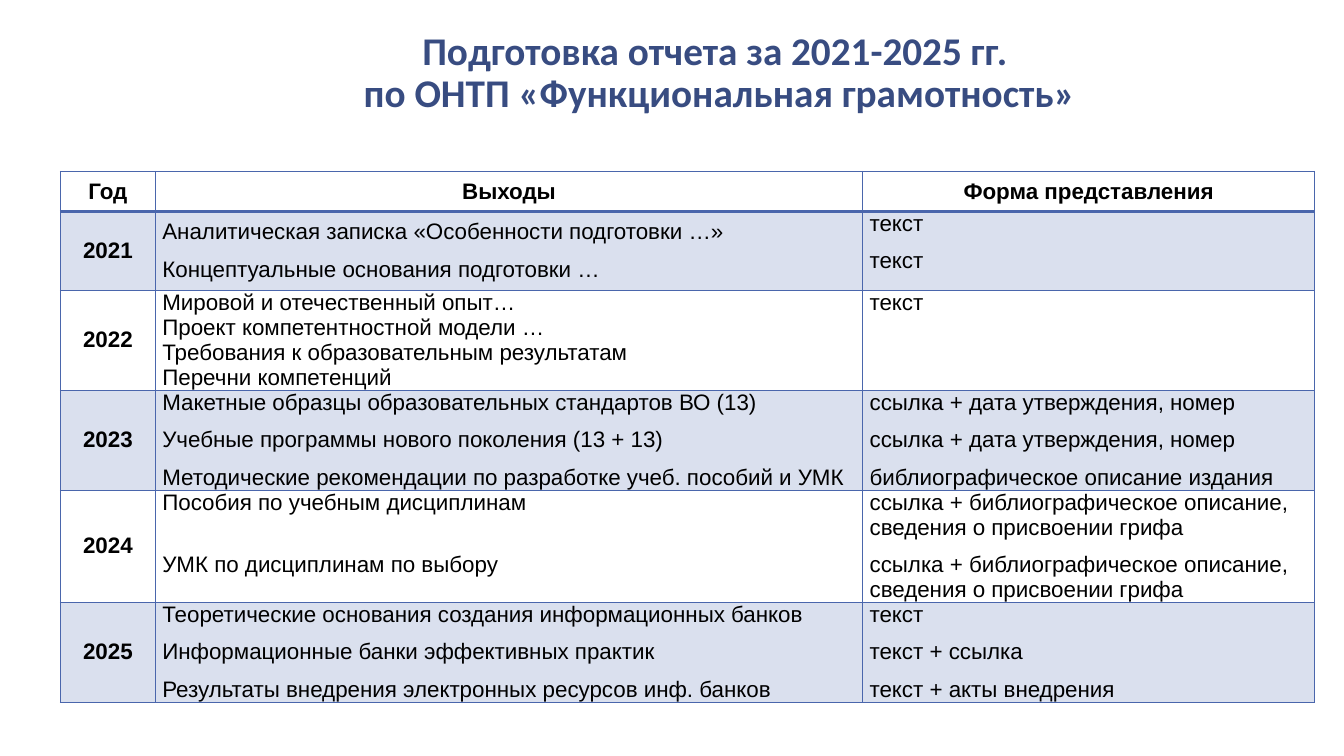
from dataclasses import dataclass

from lxml import etree
from pptx import Presentation
from pptx.dml.color import RGBColor
from pptx.enum.text import MSO_ANCHOR, PP_ALIGN
from pptx.oxml.ns import qn
from pptx.util import Pt

CENTER, LEFT = PP_ALIGN.CENTER, PP_ALIGN.LEFT
MIDDLE, TOP = MSO_ANCHOR.MIDDLE, MSO_ANCHOR.TOP
TITLE_ONLY = 5


@dataclass(frozen=True)
class Theme:
    title_color: str = "384C81"
    text_color: str = "000000"
    accent: str = "4A66AC"
    band_alpha: int = 20000
    title_font: str = "Calibri"
    body_font: str = "Arial"
    title_size: float = 28
    body_size: float = 16
    item_gap: float = 8.9
    wide_gap: float = 26.8
    thin_border: float = 1
    header_border: float = 2


@dataclass(frozen=True)
class YearRow:
    year: str
    outputs: tuple[str, ...]
    forms: tuple[str, ...]
    height: float
    gap: float = 0
    outputs_gap: float | None = None
    outputs_anchor: MSO_ANCHOR = TOP
    banded: bool = False


@dataclass(frozen=True)
class CellStyle:
    align: PP_ALIGN = LEFT
    anchor: MSO_ANCHOR = TOP
    bold: bool = False
    gap: float = 0
    banded: bool = False
    top: float = 1
    bottom: float = 1


THEME = Theme()
SLIDE_SIZE = (960, 540)
TITLE_BOX = {"left": 185, "top": 0, "width": 657.4, "height": 105.8}
TITLE = "Подготовка отчета за 2021-2025 гг. \vпо ОНТП «Функциональная грамотность»"
TABLE_LEFT, TABLE_TOP = 43.2, 122.4
COLUMN_WIDTHS = (67.8, 505.2, 323)
HEADER_HEIGHT = 28.6
HEADINGS = ("Год", "Выходы", "Форма представления")
APPROVAL = "ссылка + дата утверждения, номер"
STAMPED = "ссылка + библиографическое описание, сведения о присвоении грифа"
YEARS = (
    YearRow("2021",
            ("Аналитическая записка «Особенности подготовки …»",
             "Концептуальные основания подготовки …"),
            ("текст", "текст"),
            56.4, THEME.item_gap, outputs_anchor=MIDDLE, banded=True),
    YearRow("2022",
            ("Мировой и отечественный опыт…",
             "Проект компетентностной модели …",
             "Требования к образовательным результатам",
             "Перечни компетенций"),
            ("текст",),
            71.4, outputs_anchor=MIDDLE),
    YearRow("2023",
            ("Макетные образцы образовательных стандартов ВО (13)",
             "Учебные программы нового поколения (13 + 13)",
             "Методические рекомендации по разработке учеб. пособий и УМК"),
            (APPROVAL, APPROVAL, "библиографическое описание издания"),
            71.4, THEME.item_gap, banded=True),
    YearRow("2024",
            ("Пособия по учебным дисциплинам", "УМК по дисциплинам по выбору"),
            (STAMPED, STAMPED),
            80, THEME.item_gap, outputs_gap=THEME.wide_gap),
    YearRow("2025",
            ("Теоретические основания создания информационных банков",
             "Информационные банки эффективных практик",
             "Результаты внедрения электронных ресурсов инф. банков"),
            ("текст", "текст + ссылка", "текст + акты внедрения"),
            71.4, THEME.item_gap, banded=True),
)


def apply(target, values: dict) -> None:
    for name, value in values.items():
        setattr(target, name, value)


def format_font(font, name: str, size: float, color: str, bold: bool) -> None:
    apply(font, {"name": name, "size": Pt(size), "bold": bold})
    font.color.rgb = RGBColor.from_string(color)


def add_borders(cell, style: CellStyle) -> None:
    widths = {"a:lnL": THEME.thin_border, "a:lnR": THEME.thin_border,
              "a:lnT": style.top, "a:lnB": style.bottom}
    properties = cell._tc.get_or_add_tcPr()
    for side, width in widths.items():
        border = etree.SubElement(properties, qn(side), w=str(Pt(width)))
        paint = etree.SubElement(border, qn("a:solidFill"))
        etree.SubElement(paint, qn("a:srgbClr"), val=THEME.accent)


def fill_cell(cell, banded: bool) -> None:
    if not banded:
        cell.fill.background()
        return
    cell.fill.solid()
    cell.fill.fore_color.rgb = RGBColor.from_string(THEME.accent)
    color = cell._tc.tcPr.find(qn("a:solidFill")).find(qn("a:srgbClr"))
    etree.SubElement(color, qn("a:alpha"), val=str(THEME.band_alpha))


def write_cell(cell, lines: tuple[str, ...], style: CellStyle) -> None:
    apply(cell, {"margin_left": Pt(5), "margin_right": Pt(5), "margin_top": Pt(0),
                 "margin_bottom": Pt(0), "vertical_anchor": style.anchor})
    add_borders(cell, style)
    fill_cell(cell, style.banded)
    frame = cell.text_frame
    for index, line in enumerate(lines):
        paragraph = frame.add_paragraph() if index else frame.paragraphs[0]
        paragraph.alignment = style.align
        if index and style.gap:
            paragraph.space_before = Pt(style.gap)
        run = paragraph.add_run()
        run.text = line
        format_font(run.font, THEME.body_font, THEME.body_size, THEME.text_color, style.bold)


def add_title(slide) -> None:
    title = slide.shapes.title
    apply(title, {side: Pt(length) for side, length in TITLE_BOX.items()})
    apply(title.text_frame, {"text": TITLE, "word_wrap": True, "vertical_anchor": MIDDLE})
    heading = title.text_frame.paragraphs[0]
    apply(heading, {"alignment": CENTER, "line_spacing": 0.9})
    for run in heading.runs:
        format_font(run.font, THEME.title_font, THEME.title_size, THEME.title_color, True)


def add_report_table(slide) -> None:
    heights = (HEADER_HEIGHT, *(row.height for row in YEARS))
    table = slide.shapes.add_table(
        len(heights), len(COLUMN_WIDTHS), Pt(TABLE_LEFT), Pt(TABLE_TOP),
        Pt(sum(COLUMN_WIDTHS)), Pt(sum(heights))).table
    apply(table, {"first_row": False, "horz_banding": False})
    for column, width in zip(table.columns, COLUMN_WIDTHS):
        column.width = Pt(width)
    for table_row, height in zip(table.rows, heights):
        table_row.height = Pt(height)

    header = CellStyle(CENTER, MIDDLE, True, bottom=THEME.header_border)
    for column, heading in enumerate(HEADINGS):
        write_cell(table.cell(0, column), (heading,), header)
    for number, row in enumerate(YEARS, start=1):
        top = THEME.header_border if number == 1 else THEME.thin_border
        outputs_gap = row.gap if row.outputs_gap is None else row.outputs_gap
        contents = (
            ((row.year,), CellStyle(CENTER, MIDDLE, True, 0, row.banded, top)),
            (row.outputs, CellStyle(LEFT, row.outputs_anchor, False, outputs_gap,
                                    row.banded, top)),
            (row.forms, CellStyle(LEFT, TOP, False, row.gap, row.banded, top)),
        )
        for column, (lines, style) in enumerate(contents):
            write_cell(table.cell(number, column), lines, style)


def main() -> None:
    presentation = Presentation()
    presentation.slide_width, presentation.slide_height = map(Pt, SLIDE_SIZE)
    slide = presentation.slides.add_slide(presentation.slide_layouts[TITLE_ONLY])
    add_title(slide)
    add_report_table(slide)
    presentation.save("out.pptx")


if __name__ == "__main__":
    main()
